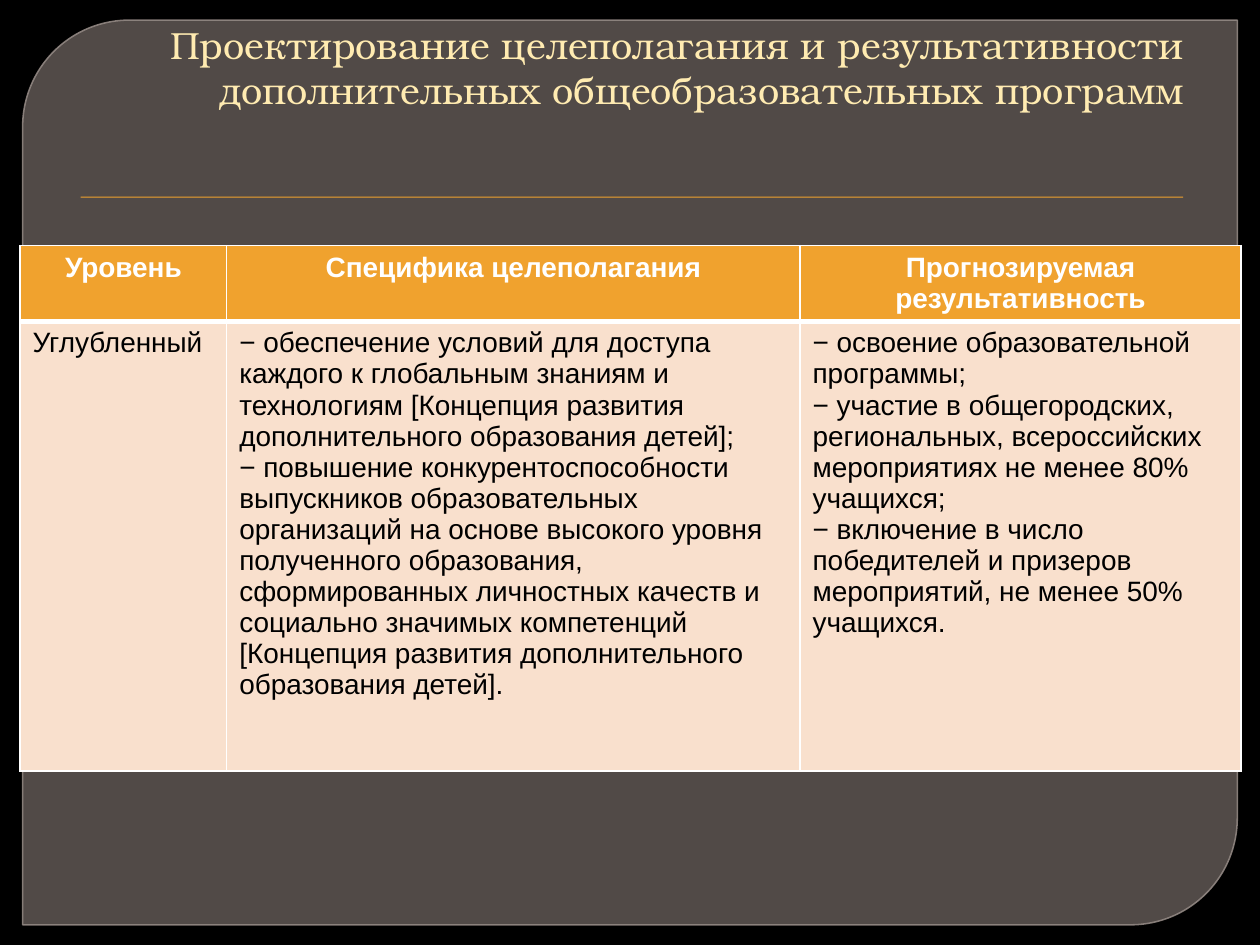
from pptx import Presentation
from pptx.dml.color import RGBColor
from pptx.enum.shapes import MSO_SHAPE
from pptx.enum.text import MSO_ANCHOR, MSO_AUTO_SIZE, PP_ALIGN
from pptx.oxml import parse_xml
from pptx.oxml.ns import nsdecls, qn
from pptx.util import Inches, Pt

# Content
TITLE = ("Проектирование целеполагания и результативности "
         "дополнительных общеобразовательных программ")
HEADER = [["Уровень"], ["Специфика целеполагания"],
          ["Прогнозируемая результативность"]]
BODY = [
    ["Углубленный"],
    ["− обеспечение условий для доступа каждого к глобальным знаниям и "
     "технологиям [Концепция развития дополнительного образования детей];",
     "− повышение конкурентоспособности",
     "выпускников образовательных",
     "организаций на основе высокого уровня полученного образования,",
     "сформированных личностных качеств и социально значимых компетенций",
     "[Концепция развития дополнительного",
     "образования детей]."],
    ["− освоение образовательной",
     "программы;",
     "− участие в общегородских,",
     "региональных, всероссийских",
     "мероприятиях не менее 80% учащихся;",
     "− включение в число победителей и призеров",
     "мероприятий, не менее 50% учащихся."],
]
COLS = [1.64, 4.55, 3.5]
ROWS = [0.6, 3.57]
ORANGE, PEACH, WHITE, BLACK = "F0A22E", "F9E0CD", "FFFFFF", "000000"


def rgb(color):
    return RGBColor.from_string(color)


def box(x, y, w, h):
    return [Inches(v) for v in (x, y, w, h)]


def set_alpha(fill_element, percent):
    color = fill_element.find(".//" + qn("a:srgbClr"))
    color.append(parse_xml(f'<a:alpha {nsdecls("a")} val="{percent * 1000}"/>'))


def add_panel(slide, preset, place, fill):
    sp = slide.shapes.add_shape(preset, *box(*place))
    sp.shadow.inherit = False
    sp.fill.solid()
    sp.fill.fore_color.rgb = rgb(fill)
    sp.line.fill.background()
    return sp


def set_borders(cell, bottom):
    tc_pr = cell._tc.get_or_add_tcPr()
    widths = {"L": 1, "R": 1, "T": 1, "B": bottom}
    for i, (side, width) in enumerate(widths.items()):
        tc_pr.insert(i, parse_xml(
            f'<a:ln{side} {nsdecls("a")} w="{Pt(width)}"><a:solidFill>'
            f'<a:srgbClr val="{WHITE}"/></a:solidFill></a:ln{side}>'))


def fill_cell(cell, lines, fill, color, bold, align, bottom):
    cell.fill.solid()
    cell.fill.fore_color.rgb = rgb(fill)
    cell.text_frame.text = "\n".join(lines)
    for p in cell.text_frame.paragraphs:
        p.alignment = align
        p.font.name = "Arial"
        p.font.size = Pt(16)
        p.font.bold = bold
        p.font.color.rgb = rgb(color)
    set_borders(cell, bottom)


prs = Presentation()
prs.slide_width, prs.slide_height = Inches(10), Inches(7.5)
slide = prs.slides.add_slide(prs.slide_layouts[5])
slide.background.fill.solid()
slide.background.fill.fore_color.rgb = rgb(BLACK)

# Backdrop panel
panel = add_panel(slide, MSO_SHAPE.ROUND_2_DIAG_RECTANGLE,
                  (0.18, 0.16, 9.64, 7.18), "7D726E")
panel.adjustments[0] = 0.118
panel.adjustments[1] = 0
set_alpha(panel.element.spPr.find(qn("a:solidFill")), 65)
panel.line.color.rgb = rgb("948A85")
panel.line.width = Pt(0.87)
set_alpha(panel.element.spPr.find(qn("a:ln")), 88)

# Rule under the title
rule = add_panel(slide, MSO_SHAPE.RECTANGLE, (0.64, 1.56, 8.75, 0.01), ORANGE)
rule.element.spPr.find(qn("a:effectLst")).append(parse_xml(
    f'<a:outerShdw {nsdecls("a")} blurRad="{Pt(1)}" dist="{Pt(1)}" dir="5400000">'
    f'<a:srgbClr val="{BLACK}"><a:alpha val="75000"/></a:srgbClr></a:outerShdw>'))

# Title, brought in front of the panel
title = slide.shapes.title
title.left, title.top, title.width, title.height = box(0.5, 0.28, 9, 0.66)
rule.element.addnext(title.element)
tf = title.text_frame
tf.text = TITLE
tf.word_wrap = True
tf.auto_size = MSO_AUTO_SIZE.NONE
tf.vertical_anchor = MSO_ANCHOR.BOTTOM
p = tf.paragraphs[0]
p.alignment = PP_ALIGN.RIGHT
p.font.name = "TeX Gyre Bonum"
p.font.size = Pt(21.6)
p.font.color.rgb = rgb("FFEBB1")

# Table
table = slide.shapes.add_table(
    len(ROWS), len(COLS), *box(0.16, 1.95, sum(COLS), sum(ROWS))).table
for column, width in zip(table.columns, COLS):
    column.width = Inches(width)
for row, height in zip(table.rows, ROWS):
    row.height = Inches(height)
for c, (head, body) in enumerate(zip(HEADER, BODY)):
    fill_cell(table.cell(0, c), head, ORANGE, WHITE, True, PP_ALIGN.CENTER, 3)
    fill_cell(table.cell(1, c), body, PEACH, BLACK, False, PP_ALIGN.LEFT, 1)
    # Shared edge between the two rows
    table.cell(1, c)._tc.tcPr.find(qn("a:lnT")).set("w", str(Pt(3)))

prs.save("out.pptx")
